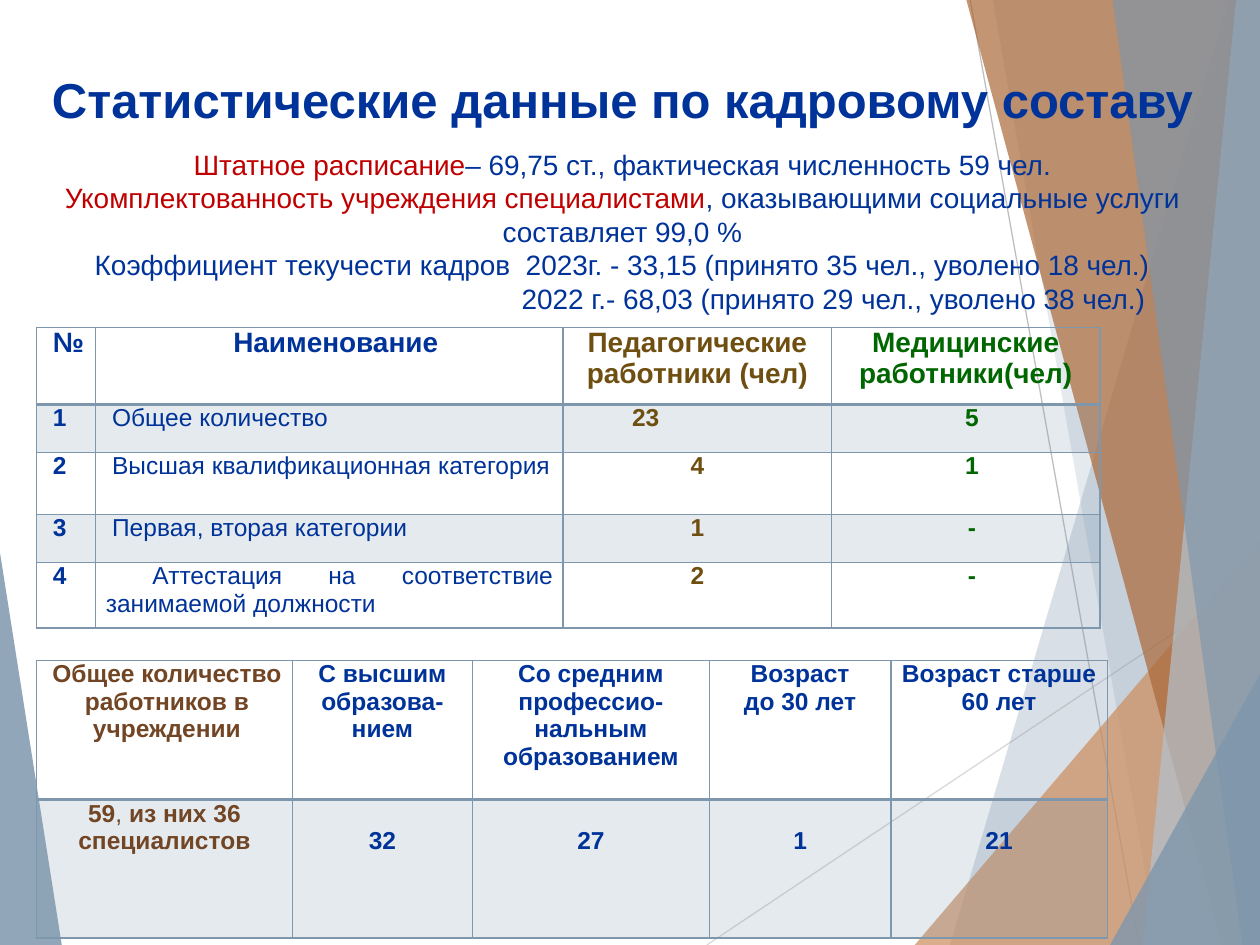
from lxml import etree
from pptx import Presentation
from pptx.dml.color import RGBColor
from pptx.enum.shapes import MSO_CONNECTOR
from pptx.enum.text import MSO_ANCHOR, MSO_AUTO_SIZE, PP_ALIGN
from pptx.oxml.ns import qn
from pptx.util import Inches, Pt

STRAIGHT = MSO_CONNECTOR.STRAIGHT
TOP = MSO_ANCHOR.TOP
NO_FIT = MSO_AUTO_SIZE.NONE
LEFT, CENTER, JUSTIFY = PP_ALIGN.LEFT, PP_ALIGN.CENTER, PP_ALIGN.JUSTIFY
TITLE_ONLY = 5
FONT = "Arial"
WIDTH, HEIGHT = Inches(10), Inches(7.5)
COLORS = {
    "navy": "003399", "red": "C00000", "olive": "6E4F10", "green": "006600",
    "brown": "724524", "steel": "7E97AD", "mist": "B2C1CE", "sand": "CC8E60",
    "copper": "AA6837", "light": "D9D9D9", "silver": "BFBFBF",
}


def box(left, top, width, height):
    """Turn percentages of the slide into a box of lengths."""
    return (int(WIDTH * left / 100), int(HEIGHT * top / 100),
            int(WIDTH * width / 100), int(HEIGHT * height / 100))


def color(name):
    """Return the named palette colour."""
    return RGBColor.from_string(COLORS[name])


def set_alpha(element, percent):
    """Make the first colour of an element partly transparent."""
    alpha = etree.SubElement(element.find(f".//{qn('a:srgbClr')}"), qn("a:alpha"))
    alpha.set("val", str(percent * 1000))


def add_runs(paragraph, runs, size, align):
    """Fill a paragraph with (text, colour, bold) runs."""
    paragraph.alignment = align
    for text, name, bold in runs:
        run = paragraph.add_run()
        run.text = text
        run.font.name, run.font.size, run.font.bold = FONT, Pt(size), bold
        run.font.color.rgb = color(name)


def strip(top, bottom):
    """Return the outline between a slanted edge and the right side."""
    return [(top, 0), (bottom, 100), (100, 100), (100, 0)]


def add_facet(slide, area, points, name, alpha):
    """Draw one translucent facet from percentages of the area."""
    left, top, width, height = area
    corners = [(left + width * x / 100, top + height * y / 100) for x, y in points]
    builder = slide.shapes.build_freeform(*corners[0], scale=1.0)
    builder.add_line_segments(corners[1:], close=True)
    shape = builder.convert_to_shape()
    shape.shadow.inherit = False
    shape.fill.solid()
    shape.fill.fore_color.rgb = color(name)
    set_alpha(shape._element.spPr, alpha)
    shape.line.fill.background()


def add_ray(slide, area, start, end, name):
    """Draw one thin line between two percentage points of the area."""
    left, top, width, height = area
    ends = [int(value) for x, y in (start, end)
            for value in (left + width * x / 100, top + height * y / 100)]
    connector = slide.shapes.add_connector(STRAIGHT, *ends)
    connector.line.color.rgb = color(name)
    connector.line.width = Pt(0.75)
    etree.SubElement(connector._element.spPr, qn("a:effectLst"))


def add_backdrop(slide, area):
    """Draw the facets and rays behind the content."""
    add_facet(slide, area, [(0, 58.5), (4.9, 100), (0, 100)], "steel", 85)
    add_ray(slide, area, (56.1, 100), (100, 60.9), "light")
    add_ray(slide, area, (77, 0), (90.4, 100), "silver")
    for points, name, alpha in (
        (strip(97.5, 75.4), "steel", 30),
        (strip(78.8, 91.9), "steel", 20),
        ([(72.6, 100), (100, 57.2), (100, 100)], "sand", 72),
        (strip(76.7, 97), "copper", 70),
        (strip(98.1, 90.7), "mist", 70),
        (strip(88.3, 98.6), "steel", 65),
        ([(88.1, 100), (100, 71.3), (100, 100)], "steel", 80),
    ):
        add_facet(slide, area, points, name, alpha)


def add_heading(slide, area):
    """Place the title with the staffing summary below it."""
    title = slide.shapes.title
    slide.shapes._spTree.append(title._element)
    title.left, title.top, title.width, title.height = area
    frame = title.text_frame
    frame.word_wrap, frame.auto_size, frame.vertical_anchor = True, NO_FIT, TOP
    frame.margin_top = Inches(0.55)
    add_runs(frame.paragraphs[0],
             [("Статистические данные по кадровому составу", "navy", True)], 28, CENTER)
    summary = [
        [("Штатное расписание", "red", False),
         ("– 69,75 ст., фактическая численность 59 чел.", "navy", False)],
        [("Укомплектованность учреждения специалистами", "red", False),
         (", оказывающими социальные услуги составляет 99,0 %", "navy", False)],
        [("Коэффициент текучести кадров  2023г. - 33,15 (принято 35 чел., уволено 18 чел.)",
          "navy", False)],
        [("2022 г.- 68,03 (принято 29 чел., уволено 38 чел.)", "navy", False)],
    ]
    for runs in summary:
        paragraph = frame.add_paragraph()
        add_runs(paragraph, runs, 16, CENTER)
        paragraph.line_spacing, paragraph.space_before = Pt(19.15), Pt(0)
    frame.paragraphs[1].space_before = Pt(11)
    paragraph.alignment = LEFT
    paragraph._p.get_or_add_pPr().set("marL", str(Inches(4)))


def add_borders(cell, row):
    """Outline a cell, with a double-width rule under the header row."""
    widths = {"a:lnL": 1, "a:lnR": 1, "a:lnT": 2 if row == 1 else 1,
              "a:lnB": 2 if row == 0 else 1}
    properties = cell._tc.get_or_add_tcPr()
    for position, (tag, width) in enumerate(widths.items()):
        line = etree.Element(qn(tag), w=str(Pt(width)))
        fill = etree.SubElement(line, qn("a:solidFill"))
        etree.SubElement(fill, qn("a:srgbClr"), val=COLORS["steel"])
        properties.insert(position, line)


def add_grid(slide, area, columns, rows):
    """Place a banded table with the given shares and return it."""
    table = slide.shapes.add_table(len(rows), len(columns), *area).table
    table.first_row = table.horz_banding = False
    for column, share in zip(table.columns, columns):
        column.width = int(area[2] * share / sum(columns))
    for row, share in zip(table.rows, rows):
        row.height = int(area[3] * share / sum(rows))
    for index, row in enumerate(table.rows):
        for cell in row.cells:
            cell.margin_left = cell.margin_right = Inches(0.08)
            cell.margin_top = cell.margin_bottom = 0
            if index % 2:
                cell.fill.solid()
                cell.fill.fore_color.rgb = color("steel")
                set_alpha(cell._tc.tcPr, 20)
            else:
                cell.fill.background()
            add_borders(cell, index)
    return table


def fill_cell(cell, text, name, bold=True, size=14, align=CENTER):
    """Write each line of the text as a paragraph of the cell."""
    cell.text_frame.text = text
    for paragraph in cell.text_frame.paragraphs:
        paragraph.alignment = align
        font = paragraph.runs[0].font
        font.name, font.size, font.bold = FONT, Pt(size), bold
        font.color.rgb = color(name)


def add_category_table(slide, area):
    """Place the table of staff categories."""
    records = [
        ("№", "Наименование", "Педагогические\nработники (чел)", "Медицинские работники(чел)"),
        ("1", "Общее количество", "23", "5"),
        ("2", "Высшая квалификационная категория", "4", "1"),
        ("3", "Первая, вторая категории", "1", "-"),
        ("4", "Аттестация на соответствие занимаемой должности", "2", "-"),
    ]
    table = add_grid(slide, area, [0.47, 3.71, 2.13, 2.13], [0.61, 0.38, 0.49, 0.38, 0.52])
    names = ["navy", "navy", "olive", "green"]
    for row, record in enumerate(records):
        for column, text in enumerate(record):
            cell = table.cell(row, column)
            justified = column == 0 or (column == 1 and row > 0)
            fill_cell(cell, text, names[column], row == 0 or column != 1,
                      16 if row == 0 else 14, JUSTIFY if justified else CENTER)
            if justified:
                indent = 0.37 if (row, column) == (4, 1) else 0.05
                cell.text_frame.paragraphs[0]._p.get_or_add_pPr().set(
                    "indent", str(Inches(indent)))
            elif column == 3 and row:
                cell.margin_left = Inches(0.18)
    table.cell(0, 1).margin_left = Inches(0.18)
    table.cell(1, 2).margin_right = Inches(0.9)


def add_profile_table(slide, area):
    """Place the table of education and age."""
    headers = ["Общее количество работников в учреждении", "С высшим образова-нием",
               "Со средним профессио-нальным образованием", "Возраст\nдо 30 лет",
               "Возраст старше 60 лет"]
    table = add_grid(slide, area, [2.03, 1.43, 1.88, 1.44, 1.72], [1.11, 1.1])
    for column, header in enumerate(headers):
        fill_cell(table.cell(0, column), header, "navy" if column else "brown")
    table.cell(0, 0).margin_left = Inches(0.12)
    add_runs(table.cell(1, 0).text_frame.paragraphs[0],
             [("59", "brown", True), (", ", "brown", False),
              ("из них 36 специалистов", "brown", True)], 14, CENTER)
    for column, value in enumerate(["32", "27", "1", "21"], start=1):
        cell = table.cell(1, column)
        fill_cell(cell, value, "navy")
        cell.margin_top = Inches(0.22)


def main():
    """Build the staffing slide and save it."""
    presentation = Presentation()
    presentation.slide_width, presentation.slide_height = WIDTH, HEIGHT
    slide = presentation.slides.add_slide(presentation.slide_layouts[TITLE_ONLY])
    add_backdrop(slide, box(0, 0, 100, 100))
    add_heading(slide, box(0.4, 0, 98, 34.8))
    add_category_table(slide, box(2.9, 34.67, 84.4, 31.8))
    add_profile_table(slide, box(2.9, 69.87, 85, 29.4))
    presentation.save("out.pptx")


if __name__ == "__main__":
    main()
